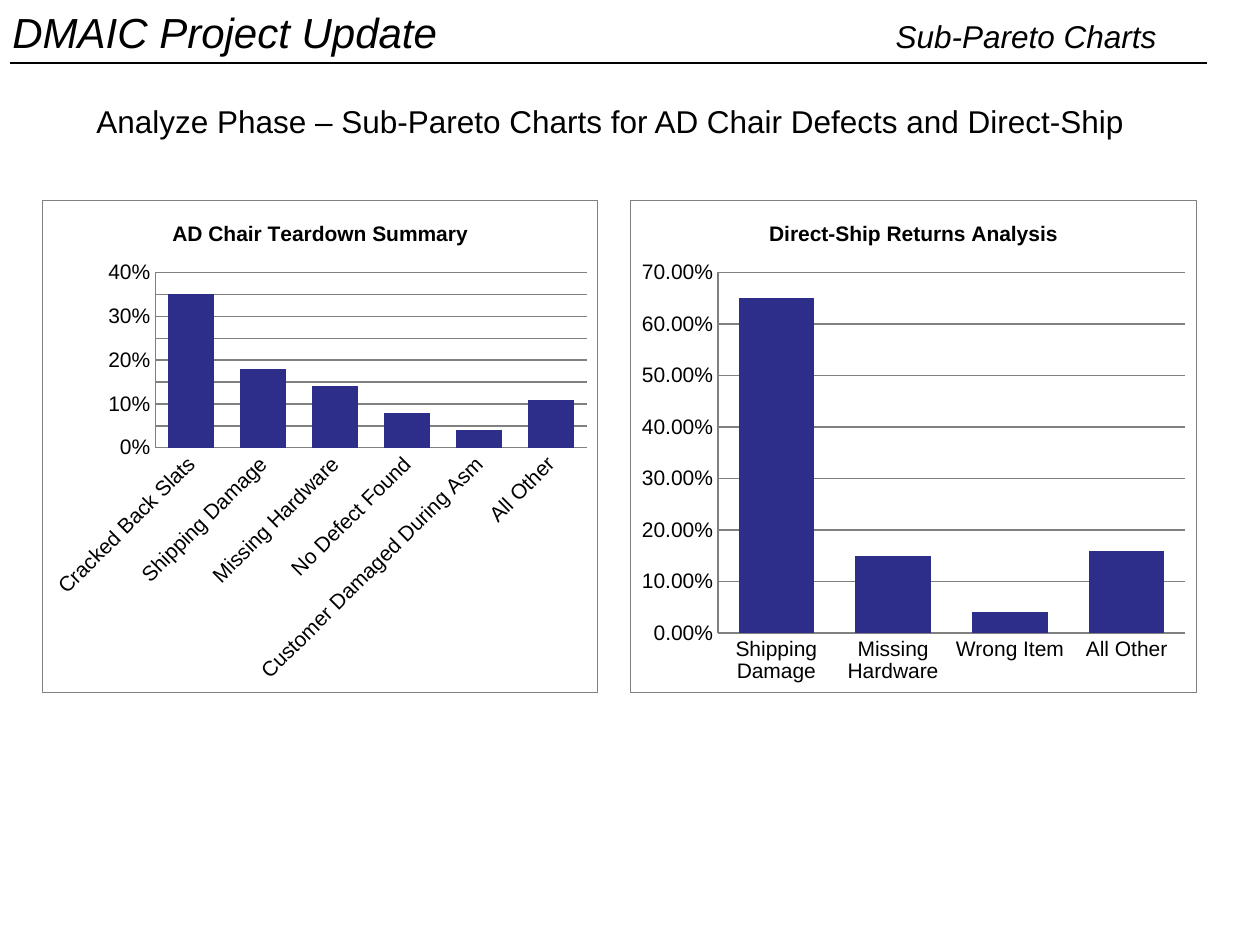
from lxml import etree
from pptx import Presentation
from pptx.chart.data import CategoryChartData
from pptx.dml.color import RGBColor
from pptx.enum.chart import XL_CHART_TYPE as ChartType, XL_TICK_MARK as TickMark
from pptx.enum.shapes import MSO_CONNECTOR as Connector
from pptx.oxml import parse_xml
from pptx.oxml.ns import nsdecls, qn
from pptx.util import Pt

COLORS = {"text": "000000", "bar": "2D2D8A", "frame": "808080"}


def rgb(name):
    return RGBColor.from_string(COLORS[name])


class SlideBuilder:
    font_name = "Arial"

    def __init__(self, slide):
        self.slide = slide

    def style_font(self, font, size, bold=False, italic=False):
        font.name = self.font_name
        font.size = Pt(size)
        font.bold = bold
        font.italic = italic
        font.color.rgb = rgb("text")

    def text(self, wording, left, top, width, height, size, italic=False):
        box = self.slide.shapes.add_textbox(Pt(left), Pt(top), Pt(width), Pt(height))
        frame = box.text_frame
        frame.word_wrap = False
        frame.text = wording
        self.style_font(frame.paragraphs[0].runs[0].font, size, italic=italic)

    def rule(self, left, right, y):
        line = self.slide.shapes.add_connector(
            Connector.STRAIGHT, Pt(left), Pt(y), Pt(right), Pt(y))
        line.line.color.rgb = rgb("text")
        line.line.width = Pt(1.5)
        etree.SubElement(line._element.spPr, qn("a:effectLst"))

    def column_chart(self, title, shares, left, width, step, top_value,
                     number_format, label_angle=0):
        data = CategoryChartData()
        data.categories = list(shares)
        data.add_series("Series 1", list(shares.values()))
        chart = self.slide.shapes.add_chart(
            ChartType.COLUMN_STACKED, Pt(left), Pt(114), Pt(width), Pt(282), data).chart
        self.style_font(chart.font, 12)
        chart.has_legend = False
        chart.has_title = True
        heading = chart.chart_title.text_frame
        heading.text = title
        self.style_font(heading.paragraphs[0].runs[0].font, 12, bold=True)

        plot = chart.plots[0]
        plot.gap_width = 55
        plot.overlap = 100
        plot.vary_by_categories = False
        fill = plot.series[0].format.fill
        fill.solid()
        fill.fore_color.rgb = rgb("bar")

        values, categories = chart.value_axis, chart.category_axis
        values.minimum_scale = 0
        values.maximum_scale = top_value
        values.major_unit = step
        values.has_major_gridlines = True
        values.tick_labels.number_format = number_format
        values.tick_labels.number_format_is_linked = False
        for axis in (values, categories):
            axis.major_tick_mark = TickMark.NONE
            axis.minor_tick_mark = TickMark.NONE
            self.style_font(axis.tick_labels.font, 12)
        for line in (values.format.line, categories.format.line,
                     values.major_gridlines.format.line):
            line.color.rgb = rgb("frame")
            line.width = Pt(0.75)
        if label_angle:
            body = categories._element.find(qn("c:txPr")).find(qn("a:bodyPr"))
            body.set("rot", str(label_angle * 60000))
        self.frame_chart(chart)

    def frame_chart(self, chart):
        """Draw a thin border around the whole chart area."""
        border = parse_xml(
            f'<c:spPr {nsdecls("c", "a")}><a:noFill/><a:ln w="{Pt(0.75)}"><a:solidFill>'
            f'<a:srgbClr val="{COLORS["frame"]}"/></a:solidFill></a:ln></c:spPr>')
        chart._chartSpace.find(qn("c:chart")).addnext(border)


def main():
    deck = Presentation()
    deck.slide_width, deck.slide_height = Pt(720), Pt(540)
    page = SlideBuilder(deck.slides.add_slide(deck.slide_layouts[6]))

    page.text("DMAIC Project Update", 0, 0, 265.7, 36.7, 24, italic=True)
    page.rule(6, 690, 36)
    page.text("Sub-Pareto Charts", 504.7, 6, 169, 29, 18, italic=True)

    teardown = {
        "Cracked Back Slats": 0.35,
        "Shipping Damage": 0.18,
        "Missing Hardware": 0.14,
        "No Defect Found": 0.08,
        "Customer Damaged During Asm": 0.04,
        "All Other": 0.11,
    }
    returns = {
        "Shipping Damage": 0.65,
        "Missing Hardware": 0.15,
        "Wrong Item": 0.04,
        "All Other": 0.16,
    }
    page.column_chart("AD Chair Teardown Summary", teardown, 24, 318,
                      0.05, 0.4, "0%", label_angle=-45)
    page.column_chart("Direct-Ship Returns Analysis", returns, 360, 324,
                      0.1, 0.7, "0.00%")
    page.text("Analyze Phase – Sub-Pareto Charts for AD Chair Defects and Direct-Ship",
              48, 54.7, 608.4, 29, 18)
    deck.save("out.pptx")


if __name__ == "__main__":
    main()
